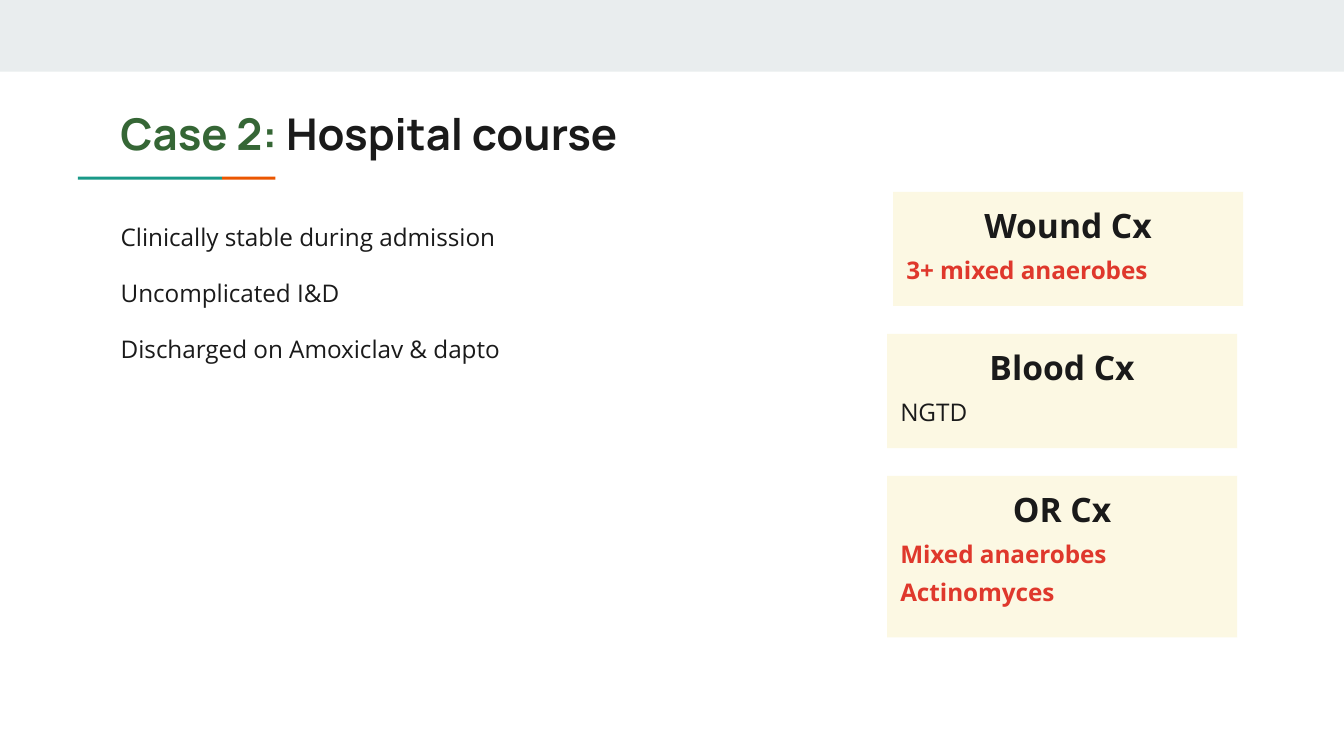
from dataclasses import dataclass

from pptx import Presentation
from pptx.dml.color import RGBColor as RGB
from pptx.enum.shapes import MSO_SHAPE as SHAPE
from pptx.enum.text import MSO_ANCHOR as ANCHOR, PP_ALIGN as ALIGN
from pptx.util import Inches, Pt


@dataclass(frozen=True)
class Theme:
    band: str = "E9EDEE"
    teal: str = "1A9988"
    orange: str = "EB5600"
    green: str = "356635"
    ink: str = "1A1A1A"
    red: str = "DF382C"
    cream: str = "FCF8E3"
    head_font: str = "Manrope"
    body_font: str = "Open Sans"
    title_size: float = 23.4
    card_size: float = 18
    body_size: float = 13


T = Theme()
W = Inches(10)
H = W * 9 // 16
COLS, ROWS = 100, 56.25
CARD_GAP = 2.07

BODY = [
    "Clinically stable during admission",
    "Uncomplicated I&D",
    "Discharged on Amoxiclav & dapto",
]
CARDS = [
    ("Wound Cx", ["3+ mixed anaerobes"], True, 66.45, 8.5),
    ("Blood Cx", ["NGTD"], False, 66, 8.5),
    ("OR Cx", ["Mixed anaerobes", "Actinomyces"], True, 66, 12.03),
]


def place(box):
    x, y, w, h = box
    return [int(v) for v in (x * W / COLS, y * H / ROWS, w * W / COLS, h * H / ROWS)]


def add_rect(s, box, fill):
    sp = s.shapes.add_shape(SHAPE.RECTANGLE, *place(box))
    sp.shadow.inherit = False
    sp.fill.solid()
    sp.fill.fore_color.rgb = RGB.from_string(fill)
    sp.line.fill.background()
    return sp


def set_frame(sp):
    tf = sp.text_frame
    fmt = {"word_wrap": True, "vertical_anchor": ANCHOR.TOP}
    fmt |= {f"margin_{side}": Inches(0.1) for side in ("left", "top", "right", "bottom")}
    for name, value in fmt.items():
        setattr(tf, name, value)
    return tf


def add_par(tf, first=False, **fmt):
    p = tf.paragraphs[0] if first else tf.add_paragraph()
    for name, value in ({"alignment": ALIGN.LEFT} | fmt).items():
        setattr(p, name, value)
    return p


def add_run(p, text, size, color=T.ink, bold=False, font=T.body_font):
    r = p.add_run()
    r.text = text
    for name, value in {"name": font, "size": Pt(size), "bold": bold}.items():
        setattr(r.font, name, value)
    r.font.color.rgb = RGB.from_string(color)


def add_title(s, box):
    tf = set_frame(s.shapes.add_textbox(*place(box)))
    p = add_par(tf, first=True)
    for text, color in (("Case 2:", T.green), (" Hospital course", T.ink)):
        add_run(p, text, T.title_size, color, True, T.head_font)


def add_underline(s, box, share=0.73):
    x, y, w, h = box
    add_rect(s, (x, y, w * share, h), T.teal)
    add_rect(s, (x + w * share, y, w * (1 - share), h), T.orange)


def add_body(s, box, lines):
    tf = set_frame(s.shapes.add_textbox(*place(box)))
    for i, line in enumerate(lines):
        p = add_par(tf, i == 0, line_spacing=1.15, space_before=Pt(12 if i else 0))
        add_run(p, line, T.body_size)


def add_card(s, box, head, lines, flagged):
    tf = set_frame(add_rect(s, box, T.cream))
    add_run(add_par(tf, True, alignment=ALIGN.CENTER), head, T.card_size, bold=True)
    for line in lines:
        p = add_par(tf, space_before=Pt(5))
        add_run(p, line, T.body_size, T.red if flagged else T.ink, flagged)


def add_cards(s, top, width):
    for head, lines, flagged, x, h in CARDS:
        add_card(s, (x, top, width, h), head, lines, flagged)
        top += h + CARD_GAP


def main():
    prs = Presentation()
    prs.slide_width, prs.slide_height = W, H
    s = prs.slides.add_slide(prs.slide_layouts[6])
    add_rect(s, (0, 0, COLS, 5.33), T.band)
    add_underline(s, (5.8, 13.15, 14.7, 0.22))
    add_title(s, (7.97, 6.93, 84.1, 5.9))
    add_body(s, (8, 15.22, 41.3, 24.7), BODY)
    add_cards(s, 14.27, 26.05)
    prs.save("out.pptx")


if __name__ == "__main__":
    main()
